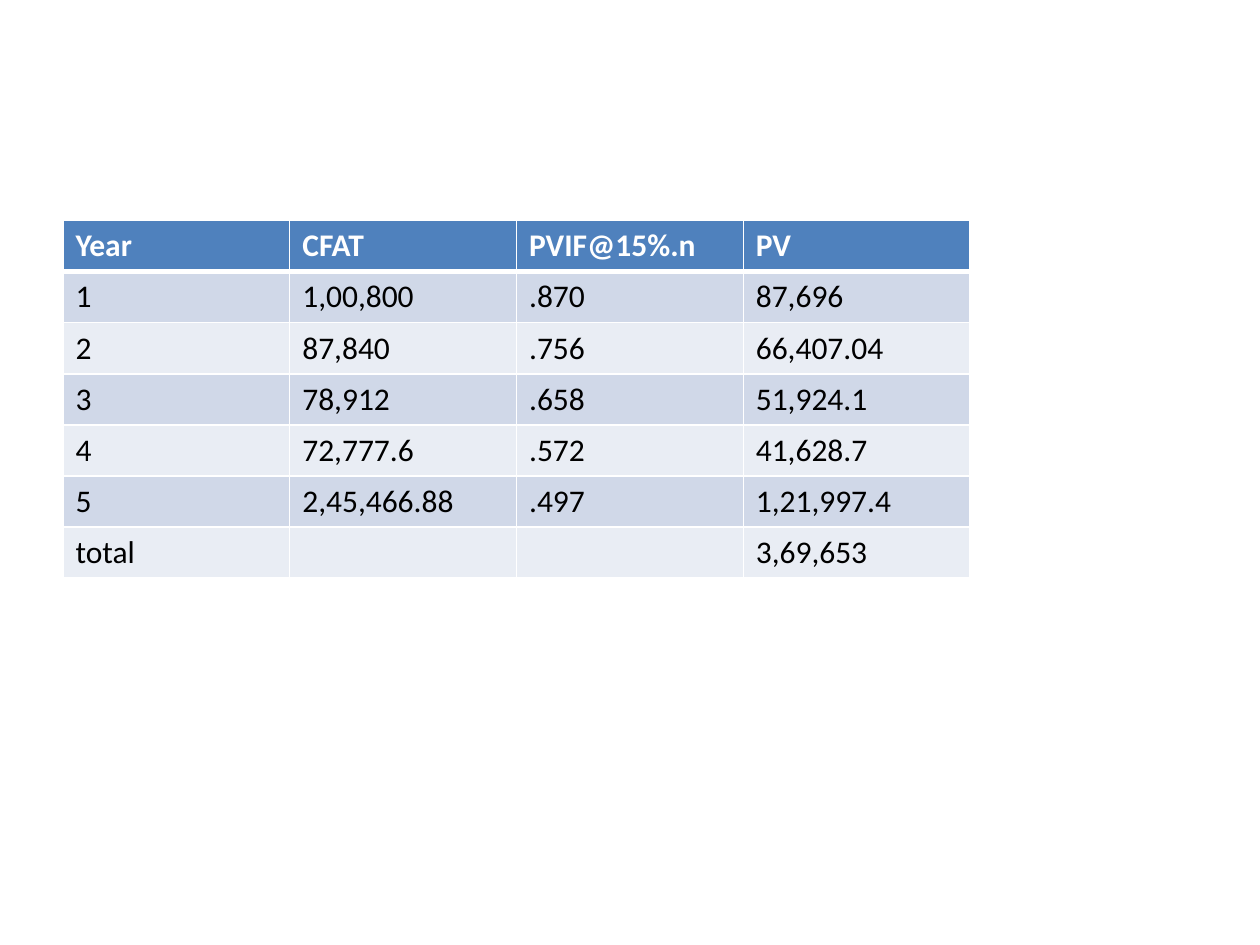
from lxml import etree
from pptx import Presentation
from pptx import util as u
from pptx.dml.color import RGBColor
from pptx.oxml.ns import qn

HUES = {"head": "4F81BD", "odd": "D0D8E8", "even": "E9EDF4",
        "light": "FFFFFF", "dark": "000000"}
ROWS = [
    ("Year", "CFAT", "PVIF@15%.n", "PV"),
    ("1", "1,00,800", ".870", "87,696"),
    ("2", "87,840", ".756", "66,407.04"),
    ("3", "78,912", ".658", "51,924.1"),
    ("4", "72,777.6", ".572", "41,628.7"),
    ("5", "2,45,466.88", ".497", "1,21,997.4"),
    ("total", "", "", "3,69,653"),
]


def hue(name):
    return RGBColor.from_string(HUES[name])


def edge(cell, side, width):
    line = etree.SubElement(cell._tc.get_or_add_tcPr(), qn(f"a:ln{side}"),
                            w=str(u.Pt(width)))
    fill = etree.SubElement(line, qn("a:solidFill"))
    etree.SubElement(fill, qn("a:srgbClr"), val=HUES["light"])


def paint(cell, row):
    thick = {"T": row == 1, "B": row == 0}
    for side in "LRTB":
        edge(cell, side, 3 if thick.get(side) else 1)
    cell.fill.solid()
    band = "odd" if row % 2 else "even"
    cell.fill.fore_color.rgb = hue(band if row else "head")


def write(cell, words, row):
    if not words:
        return
    cell.text = words
    font = cell.text_frame.paragraphs[0].runs[0].font
    form = {"name": "Calibri", "size": u.Pt(18), "bold": row == 0}
    for key, value in form.items():
        setattr(font, key, value)
    font.color.rgb = hue("dark" if row else "light")


def grid(slide, rows, left, top, wide, high):
    box = (u.Inches(n) for n in (left, top, wide, high))
    table = slide.shapes.add_table(len(rows), len(rows[0]), *box).table
    for r, row in enumerate(rows):
        for c, words in enumerate(row):
            cell = table.cell(r, c)
            paint(cell, r)
            write(cell, words, r)


def main():
    deck = Presentation()
    wide, high = 10, 7.5
    deck.slide_width, deck.slide_height = u.Inches(wide), u.Inches(high)
    slide = deck.slides.add_slide(deck.slide_layouts[6])
    grid(slide, ROWS, wide * 0.05, 1.75, wide * 0.72, 2.84)
    deck.save("out.pptx")


if __name__ == "__main__":
    main()
